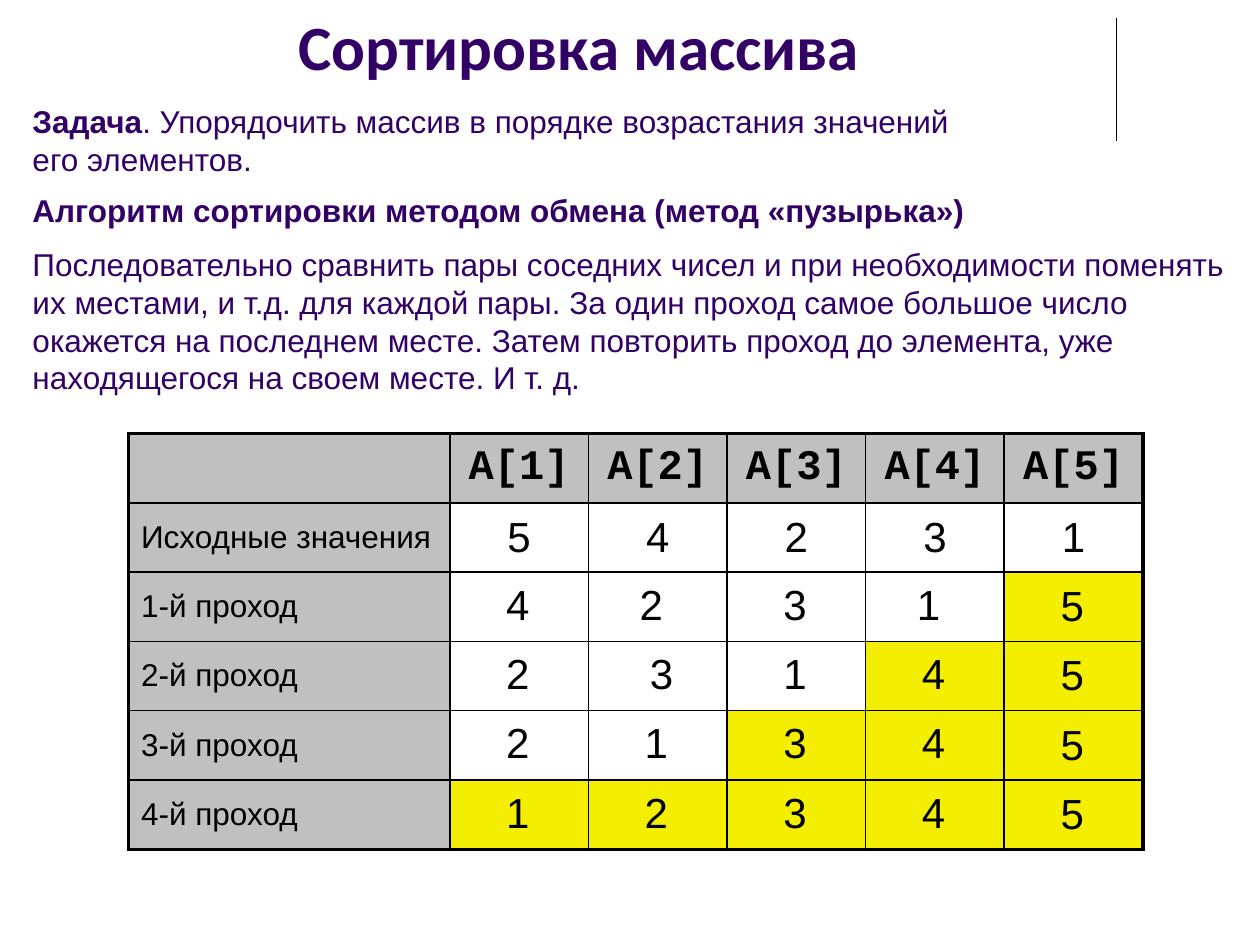
from lxml.etree import SubElement
from pptx import Presentation
from pptx.dml.color import RGBColor
from pptx.enum.shapes import MSO_CONNECTOR
from pptx.enum.text import MSO_ANCHOR, PP_ALIGN
from pptx.oxml.ns import qn
from pptx.util import Inches, Pt

PURPLE = RGBColor(0x33, 0x00, 0x66)
BLACK = RGBColor(0x00, 0x00, 0x00)
GRAY = RGBColor(0xC0, 0xC0, 0xC0)
YELLOW = RGBColor(0xF4, 0xEE, 0x00)

TITLE = "Сортировка массива"
# Each paragraph is a list of (text, bold) spans.
TASK = [[("Задача", True),
         (". Упорядочить массив в порядке возрастания значений \nего элементов.", False)]]
ALGORITHM = [
    [("Алгоритм сортировки методом обмена (метод «пузырька»)", True)],
    [("Последовательно сравнить пары соседних чисел и при необходимости поменять "
      "их местами, и т.д. для каждой пары. За один проход самое большое число "
      "окажется на последнем месте. Затем повторить проход до элемента, уже "
      "находящегося на своем месте. И т. д.", False)],
]
HEADERS = ["", "A[1]", "A[2]", "A[3]", "A[4]", "A[5]"]
START = ["Исходные значения", "5", "4", "2", "3", "1"]
# Label, array after the pass, number of sorted elements at its end
PASSES = [
    ("1-й проход", "42315", 1),
    ("2-й проход", "23145", 2),
    ("3-й проход", "21345", 3),
    ("4-й проход", "12345", 5),
]
# Small sideways shifts of digits, keyed by (pass, column)
SHIFTS = {(0, 1): -0.04, (0, 3): -0.04, (1, 1): 0.04}

TABLE_LEFT, TABLE_TOP = 1.02, 3.44
LABEL_WIDTH, VALUE_WIDTH, ROW_HEIGHT = 2.55, 1.1, 0.55
THIN, THICK = 1, 2.25


def style(para, font_name, size, color, bold=False, align=PP_ALIGN.LEFT):
    para.alignment = align
    font = para.font
    font.name, font.size, font.bold = font_name, Pt(size), bold
    font.color.rgb = color


def add_box(page, left, top, width, height, anchor=MSO_ANCHOR.TOP):
    box = page.shapes.add_textbox(Inches(left), Inches(top), Inches(width), Inches(height))
    box.text_frame.word_wrap = True
    box.text_frame.vertical_anchor = anchor
    return box.text_frame


def add_body(page, paragraphs, left, top, width, height):
    frame = add_box(page, left, top, width, height)
    for index, spans in enumerate(paragraphs):
        para = frame.add_paragraph() if index else frame.paragraphs[0]
        if index:
            para.space_before = Pt(9)
        style(para, "Arial", 18, PURPLE)
        for text, bold in spans:
            for number, line in enumerate(text.split("\n")):
                if number:
                    para.add_line_break()
                span = para.add_run()
                span.text = line
                span.font.bold = bold


def set_borders(cell, widths):
    properties = cell._tc.get_or_add_tcPr()
    for side, width in zip("LRTB", widths):
        line = SubElement(properties, qn(f"a:ln{side}"), w=str(Pt(width)))
        fill = SubElement(line, qn("a:solidFill"))
        SubElement(fill, qn("a:srgbClr"), val=str(BLACK))


def add_sorting_table(page):
    rows = [HEADERS, START] + [[label] + [""] * 5 for label, _, _ in PASSES]
    last_row, last_col = len(rows) - 1, len(HEADERS) - 1
    table = page.shapes.add_table(
        len(rows), len(HEADERS), Inches(TABLE_LEFT), Inches(TABLE_TOP),
        Inches(LABEL_WIDTH + VALUE_WIDTH * last_col), Inches(ROW_HEIGHT * len(rows))).table
    table.first_row = table.horz_banding = False
    for c, column in enumerate(table.columns):
        column.width = Inches(VALUE_WIDTH if c else LABEL_WIDTH)
    for r, texts in enumerate(rows):
        table.rows[r].height = Inches(ROW_HEIGHT)
        sorted_count = PASSES[r - 2][2] if r > 1 else 0
        for c, text in enumerate(texts):
            cell = table.cell(r, c)
            cell.text = text
            cell.vertical_anchor = MSO_ANCHOR.MIDDLE
            outer = (c == 0, c == last_col, r == 0, r == last_row)
            set_borders(cell, [THICK if edge else THIN for edge in outer])
            if r == 0 or c == 0:
                cell.fill.solid()
                cell.fill.fore_color.rgb = GRAY
            elif c > last_col - sorted_count:
                cell.fill.solid()
                cell.fill.fore_color.rgb = YELLOW
            else:
                cell.fill.background()
            style(cell.text_frame.paragraphs[0], "Arial" if r else "Courier New",
                  24 if c else 18, BLACK, bold=r == 0,
                  align=PP_ALIGN.CENTER if c else PP_ALIGN.LEFT)


def add_pass_digits(page):
    first_left = TABLE_LEFT + LABEL_WIDTH + 0.01
    for p, (_, digits, _) in enumerate(PASSES):
        top = TABLE_TOP + ROW_HEIGHT * (p + 2)
        for c, digit in enumerate(digits):
            left = first_left + VALUE_WIDTH * c + SHIFTS.get((p, c), 0)
            drop = 0.01 if c == len(digits) - 1 else 0
            para = add_box(page, left, top + drop, 1.06, 0.5).paragraphs[0]
            para.text = digit
            style(para, "Arial", 24, BLACK, align=PP_ALIGN.CENTER)


def main():
    deck = Presentation()
    deck.slide_width, deck.slide_height = Inches(10), Inches(7.5)
    page = deck.slides.add_slide(deck.slide_layouts[6])

    rule = page.shapes.add_connector(
        MSO_CONNECTOR.STRAIGHT, Inches(8.86), Inches(0.14), Inches(8.86), Inches(1.12))
    rule.line.color.rgb = BLACK
    rule.line.width = Pt(0.75)
    SubElement(rule._element.spPr, qn("a:effectLst"))

    title = add_box(page, 0.47, 0, 8.25, 0.71, MSO_ANCHOR.BOTTOM).paragraphs[0]
    title.text = TITLE
    style(title, "Calibri", 36, PURPLE, bold=True, align=PP_ALIGN.CENTER)

    add_body(page, ALGORITHM, 0.16, 1.47, 9.73, 1.75)
    add_sorting_table(page)
    add_pass_digits(page)
    add_body(page, TASK, 0.16, 0.76, 8.54, 0.71)
    deck.save("out.pptx")


if __name__ == "__main__":
    main()
